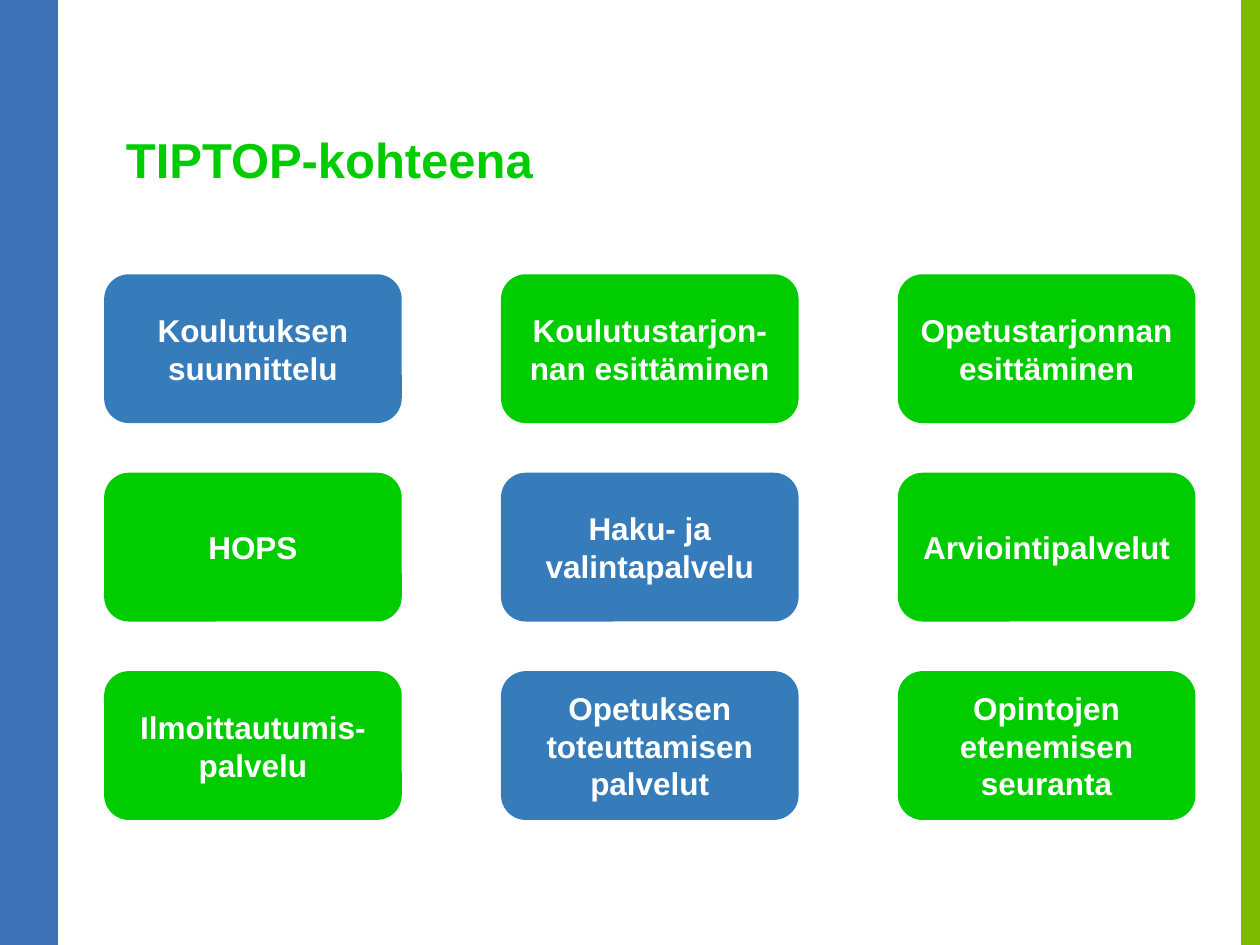
from pptx import Presentation
from pptx.dml.color import RGBColor
from pptx.enum import shapes, text
from pptx.util import Cm, Pt

COLORS = {
    "left_bar": "3C71B6",
    "right_bar": "7DBA00",
    "blue": "367CBB",
    "green": "00CC00",
    "white": "FFFFFF",
}
SERVICES = [
    [("Koulutuksen suunnittelu", "blue"),
     ("Koulutustarjon-nan esittäminen", "green"),
     ("Opetustarjonnan esittäminen", "green")],
    [("HOPS", "green"),
     ("Haku- ja valintapalvelu", "blue"),
     ("Arviointipalvelut", "green")],
    [("Ilmoittautumis-palvelu", "green"),
     ("Opetuksen toteuttamisen palvelut", "blue"),
     ("Opintojen etenemisen seuranta", "green")],
]


def add_block(slide, preset, box, color):
    """Add a flat filled shape in a box given in centimetres."""
    block = slide.shapes.add_shape(preset, *map(Cm, box))
    block.shadow.inherit = False
    block.fill.solid()
    block.fill.fore_color.rgb = RGBColor.from_string(COLORS[color])
    block.line.fill.background()
    return block


def write_text(holder, wording, size, color, align):
    """Write one bold, vertically centred paragraph."""
    frame = holder.text_frame
    frame.text = wording
    frame.word_wrap = True
    frame.vertical_anchor = text.MSO_ANCHOR.MIDDLE
    paragraph = frame.paragraphs[0]
    paragraph.alignment = align
    font = paragraph.runs[0].font
    font.name, font.size, font.bold = "Arial", Pt(size), True
    font.color.rgb = RGBColor.from_string(COLORS[color])


def add_side_bars(slide, box):
    """Add the coloured bars along both side edges of the box."""
    left, top, width, height = box
    left_width, right_width = 1.17, 0.38
    rectangle = shapes.MSO_SHAPE.RECTANGLE
    add_block(slide, rectangle, (left, top, left_width, height), "left_bar")
    right = left + width - right_width
    add_block(slide, rectangle, (right, top, right_width, height), "right_bar")


def add_title(slide, box):
    """Add the heading of the slide."""
    heading = slide.shapes.add_textbox(*map(Cm, box))
    write_text(heading, "TIPTOP-kohteena", 28, "green", text.PP_ALIGN.LEFT)


def add_service_grid(slide, box):
    """Spread the service cards evenly over the box."""
    left, top, width, height = box
    card_width, card_height = 6, 3
    column_step = (width - card_width) / (len(SERVICES[0]) - 1)
    row_step = (height - card_height) / (len(SERVICES) - 1)
    for row, services in enumerate(SERVICES):
        for column, (service, color) in enumerate(services):
            card_box = (left + column * column_step, top + row * row_step,
                        card_width, card_height)
            card = add_block(slide, shapes.MSO_SHAPE.ROUNDED_RECTANGLE,
                             card_box, color)
            write_text(card, service, 18, "white", text.PP_ALIGN.CENTER)


def main():
    """Build the slide and save it."""
    deck = Presentation()
    deck.slide_width, deck.slide_height = Cm(25.4), Cm(19.05)
    slide = deck.slides.add_slide(deck.slide_layouts[6])
    add_side_bars(slide, (0, 0, 25.4, 19.05))
    add_title(slide, (2.29, 2.31, 17.55, 1.8))
    add_service_grid(slide, (2.1, 5.53, 22, 11))
    deck.save("out.pptx")


if __name__ == "__main__":
    main()
